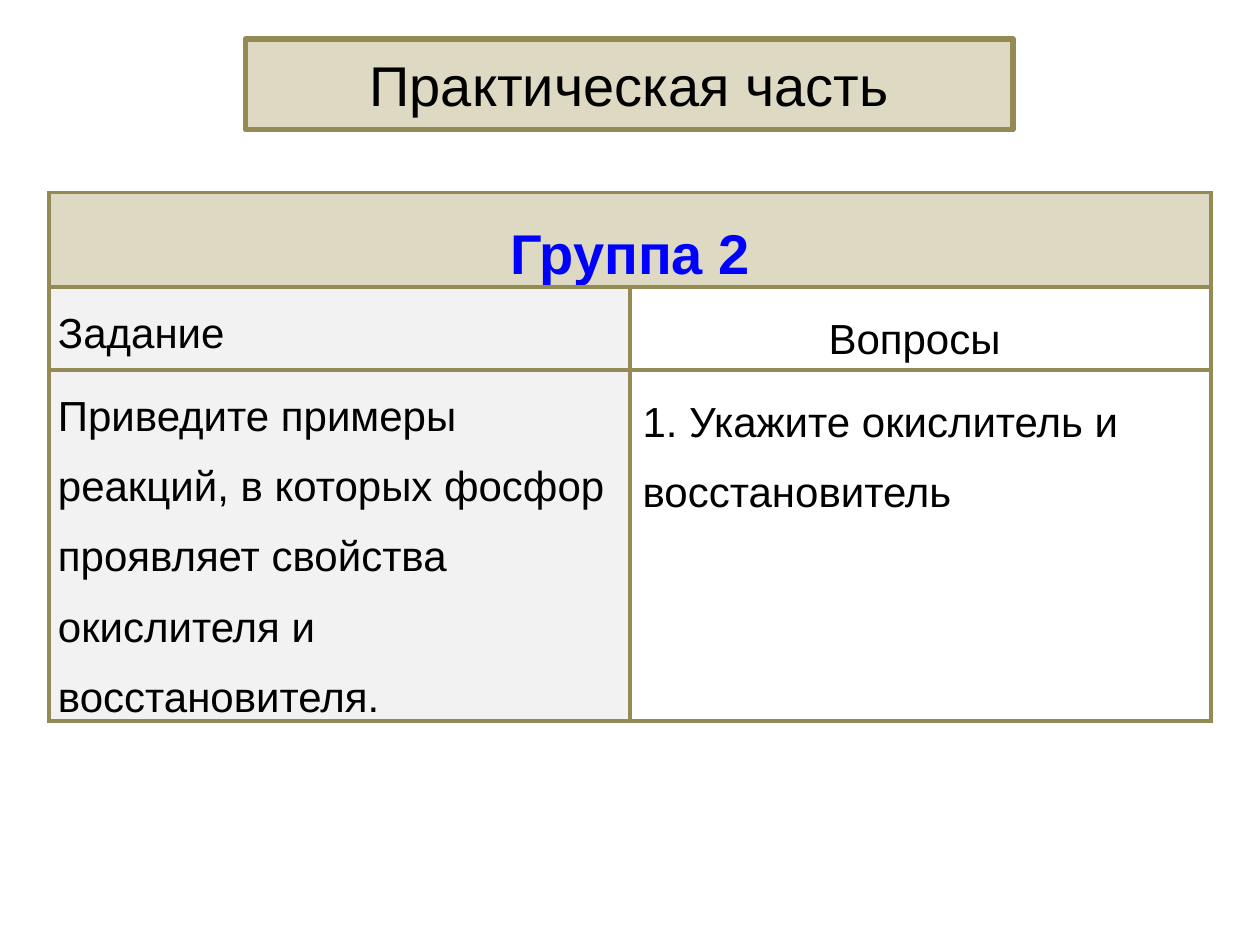
from dataclasses import dataclass
from typing import Optional

from lxml.etree import SubElement
from pptx import Presentation
from pptx.dml.color import RGBColor
from pptx.enum.text import MSO_ANCHOR as Anchor, PP_ALIGN as Align
from pptx.oxml.ns import qn
from pptx.util import Inches, Pt

SAND = RGBColor(0xDD, 0xD9, 0xC3)
OLIVE = RGBColor(0x94, 0x8A, 0x54)
PALE = RGBColor(0xF2, 0xF2, 0xF2)
BLUE = RGBColor(0x00, 0x00, 0xFF)
BLACK = RGBColor(0x00, 0x00, 0x00)
FONT = "Arial"
WIDTH, HEIGHT = Inches(10), Inches(7.5)
TABLE_LEFT, TABLE_TOP, TABLE_HEIGHT = Inches(0.39), Inches(1.53), Inches(4.5)
ROW_HEIGHTS = (0.41, 0.41, 0.81)


@dataclass(frozen=True)
class Entry:
    """Text and look of one table cell."""
    row: int
    column: int
    text: str
    align: Align = Align.LEFT
    fill: Optional[RGBColor] = None
    tight: bool = False
    anchor: Anchor = Anchor.TOP
    size: int = 24
    color: RGBColor = BLACK
    bold: bool = False


ENTRIES = (
    Entry(0, 0, "Группа 2", Align.CENTER, SAND, True, size=32, color=BLUE, bold=True),
    Entry(1, 0, "Задание", Align.JUSTIFY, PALE, True),
    Entry(1, 1, "Вопросы ", Align.CENTER),
    Entry(2, 0, "Приведите примеры реакций, в которых фосфор проявляет свойства "
                "окислителя и восстановителя.", fill=PALE, tight=True, anchor=Anchor.MIDDLE),
    Entry(2, 1, "1. Укажите окислитель и восстановитель"),
)


def style_text(paragraph, size: int, color: RGBColor, bold: bool, align: Align) -> None:
    """Format a paragraph and its runs."""
    paragraph.alignment = align
    for run in paragraph.runs:
        run.font.name = FONT
        run.font.size = Pt(size)
        run.font.bold = bold
        run.font.color.rgb = color


def add_borders(cell) -> None:
    """Frame a cell on all four sides."""
    properties = cell._tc.get_or_add_tcPr()
    for position, side in enumerate(("lnL", "lnR", "lnT", "lnB")):
        border = SubElement(properties, qn(f"a:{side}"), w=str(Pt(2.25)))
        SubElement(SubElement(border, qn("a:solidFill")), qn("a:srgbClr"), val=str(OLIVE))
        properties.insert(position, border)


def fill_cell(cell, entry: Entry) -> None:
    """Write and format one table entry."""
    cell.text_frame.text = entry.text
    cell.vertical_anchor = entry.anchor
    if entry.tight:
        cell.margin_left = cell.margin_right = Inches(0.07)
        cell.margin_top = cell.margin_bottom = 0
    if entry.fill is None:
        cell.fill.background()
    else:
        cell.fill.solid()
        cell.fill.fore_color.rgb = entry.fill
    paragraph = cell.text_frame.paragraphs[0]
    paragraph.line_spacing = 1.5
    style_text(paragraph, entry.size, entry.color, entry.bold, entry.align)


def add_title(slide) -> None:
    """Place the framed heading."""
    heading = slide.shapes.title
    heading.width, heading.height = Inches(6.09), Inches(0.72)
    heading.left, heading.top = Inches(1.95), Inches(0.31)
    heading.fill.solid()
    heading.fill.fore_color.rgb = SAND
    heading.line.color.rgb = OLIVE
    heading.line.width = Pt(3)
    heading.text_frame.text = "Практическая часть"
    heading.text_frame.vertical_anchor = Anchor.MIDDLE
    style_text(heading.text_frame.paragraphs[0], 32, BLACK, False, Align.CENTER)


def add_task_table(slide) -> None:
    """Build the group's table of task and questions."""
    frame = slide.shapes.add_table(len(ROW_HEIGHTS), 2, TABLE_LEFT, TABLE_TOP,
                                   WIDTH - 2 * TABLE_LEFT, TABLE_HEIGHT)
    table = frame.table
    table.first_row = table.horz_banding = False
    for row, height in zip(table.rows, ROW_HEIGHTS):
        row.height = Inches(height)
    frame.height = TABLE_HEIGHT
    table.cell(0, 0).merge(table.cell(0, 1))
    for cell in table.iter_cells():
        add_borders(cell)
    for entry in ENTRIES:
        fill_cell(table.cell(entry.row, entry.column), entry)


def main() -> None:
    """Create and save the slide."""
    deck = Presentation()
    deck.slide_width, deck.slide_height = WIDTH, HEIGHT
    slide = deck.slides.add_slide(deck.slide_layouts[5])
    add_title(slide)
    add_task_table(slide)
    deck.save("out.pptx")


if __name__ == "__main__":
    main()
